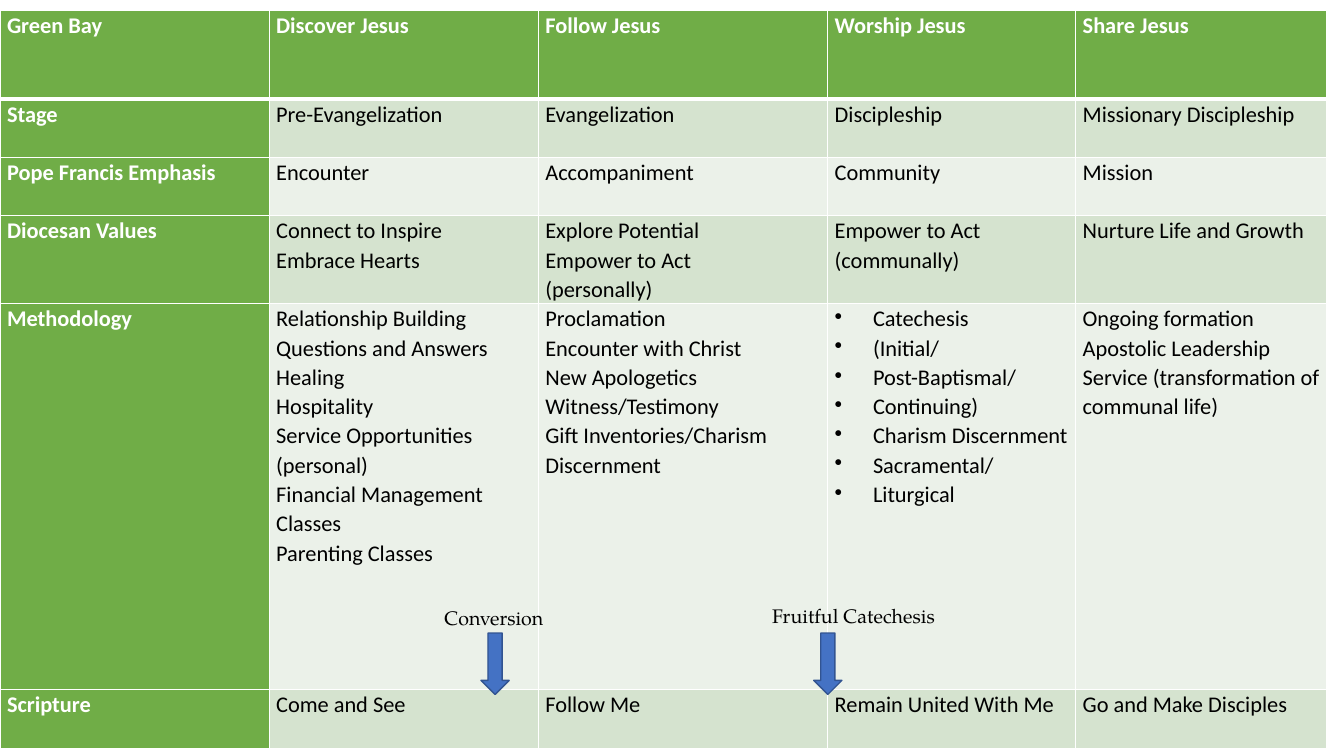
from dataclasses import dataclass

from lxml.etree import SubElement
from pptx import Presentation
from pptx.dml.color import RGBColor
from pptx.enum.shapes import MSO_SHAPE
from pptx.enum.text import MSO_AUTO_SIZE
from pptx.oxml import parse_xml
from pptx.oxml.ns import nsdecls, qn
from pptx.util import Pt

SCALE = 9144  # EMU in one px, 100 px to the inch


@dataclass(frozen=True)
class Theme:
    green: str = "70AD47"
    bands: tuple = ("EBF1E9", "D5E3CF")
    white: str = "FFFFFF"
    black: str = "000000"
    blue: str = "4472C4"
    edge: str = "325491"
    body: str = "Calibri"
    serif: str = "TeX Gyre Pagella"
    cell: int = 16
    note: int = 14


THEME = Theme()

COLS = [267, 267, 287, 246, 249]
ROWS = [88, 58, 58, 84, 383, 58]

# Each line break within a cell starts a new paragraph
CELLS = [
    ["Green Bay", "Discover Jesus", "Follow Jesus", "Worship Jesus", "Share Jesus"],
    ["Stage", "Pre-Evangelization", "Evangelization", "Discipleship",
     "Missionary Discipleship"],
    ["Pope Francis Emphasis", "Encounter", "Accompaniment", "Community", "Mission"],
    ["Diocesan Values",
     "Connect to Inspire\nEmbrace Hearts",
     "Explore Potential\nEmpower to Act\n(personally)",
     "Empower to Act\n(communally)",
     "Nurture Life and Growth"],
    ["Methodology",
     "Relationship Building\nQuestions and Answers\nHealing\nHospitality\n"
     "Service Opportunities (personal)\nFinancial Management Classes\n"
     "Parenting Classes",
     "Proclamation\nEncounter with Christ\nNew Apologetics\nWitness/Testimony\n"
     "Gift Inventories/Charism Discernment",
     "Catechesis\n(Initial/\nPost-Baptismal/\nContinuing)\n"
     "Charism Discernment\nSacramental/\nLiturgical",
     "Ongoing formation\nApostolic Leadership\n"
     "Service (transformation of communal life)"],
    ["Scripture", "Come and See", "Follow Me", "Remain United With Me",
     "Go and Make Disciples"],
]
LISTS = {(4, 3)}  # cells set as bullet lists

# Label text, label box, arrow left edge
STEPS = [
    ("Conversion", (431, 596, 120, 34), 477),
    ("Fruitful Catechesis", (756, 594, 184, 34), 807),
]


def px(*sizes):
    return [size * SCALE for size in sizes]


def paint(fill, color):
    fill.solid()
    fill.fore_color.rgb = RGBColor.from_string(color)


def style(para, face, size, color, bold=False):
    font = para.font
    font.name, font.size, font.bold = face, Pt(size), bold
    font.color.rgb = RGBColor.from_string(color)


def add_bullet(para):
    props = para._p.get_or_add_pPr()
    indent = 38 * SCALE
    props.set("marL", str(indent))
    props.set("indent", str(-indent))
    mark = SubElement(props, qn("a:buChar"))
    mark.set("char", "•")
    props.insert_element_before(mark, "a:tabLst", "a:defRPr", "a:extLst")


def add_rules(cell, row):
    props = cell._tc.get_or_add_tcPr()
    heavy = {0: "B", 1: "T"}.get(row)
    for spot, side in enumerate("LRTB"):
        width = Pt(3 if side == heavy else 1)
        props.insert(spot, parse_xml(
            f'<a:ln{side} {nsdecls("a")} w="{width}"><a:solidFill>'
            f'<a:srgbClr val="{THEME.white}"/></a:solidFill></a:ln{side}>'))


def fill_cell(cell, row, col, text):
    head = row == 0 or col == 0
    cell.margin_left = cell.margin_right = 7 * SCALE
    cell.margin_top = cell.margin_bottom = 0
    paint(cell.fill, THEME.green if head else THEME.bands[row % 2])
    add_rules(cell, row)
    cell.text = text
    for para in cell.text_frame.paragraphs:
        para.line_spacing = 1.07
        style(para, THEME.body, THEME.cell,
              THEME.white if head else THEME.black, head)
        if (row, col) in LISTS:
            add_bullet(para)


def add_grid(slide):
    frame = slide.shapes.add_table(
        len(ROWS), len(COLS), *px(0, 10, sum(COLS), sum(ROWS)))
    table = frame.table
    table.horz_banding = False
    table.first_col = True
    for col, width in zip(table.columns, COLS):
        col.width = width * SCALE
    for row, height in zip(table.rows, ROWS):
        row.height = height * SCALE
    for row, texts in enumerate(CELLS):
        for col, text in enumerate(texts):
            fill_cell(table.cell(row, col), row, col, text)


def add_arrow(slide, left):
    arrow = slide.shapes.add_shape(
        MSO_SHAPE.DOWN_ARROW, *px(left, 628, 28, 61))
    arrow.shadow.inherit = False
    paint(arrow.fill, THEME.blue)
    paint(arrow.line.fill, THEME.edge)
    arrow.line.width = Pt(1)


def add_label(slide, text, box):
    frame = slide.shapes.add_textbox(*px(*box)).text_frame
    frame.word_wrap = False
    frame.auto_size = MSO_AUTO_SIZE.SHAPE_TO_FIT_TEXT
    frame.text = text
    style(frame.paragraphs[0], THEME.serif, THEME.note, THEME.black)


def main():
    deck = Presentation()
    deck.slide_width, deck.slide_height = px(1333, 750)
    slide = deck.slides.add_slide(deck.slide_layouts[6])

    # Table of stages
    add_grid(slide)

    # Turning points between the stages
    for text, box, left in STEPS:
        add_arrow(slide, left)
        add_label(slide, text, box)

    deck.save("out.pptx")


if __name__ == "__main__":
    main()
